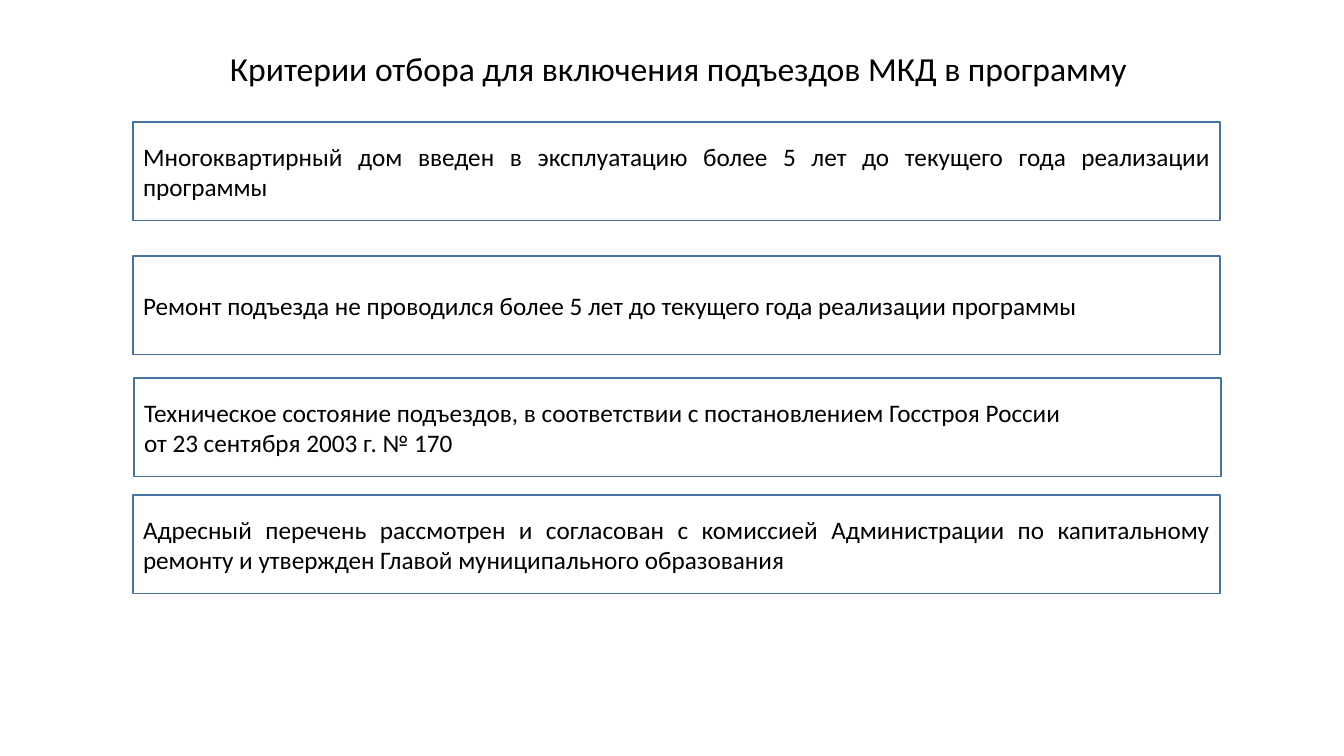
from pptx import Presentation
from pptx.dml.color import RGBColor
from pptx.enum.shapes import MSO_SHAPE
from pptx.enum.text import MSO_ANCHOR, PP_ALIGN
from pptx.util import Inches, Pt

TITLE = "Критерии отбора для включения подъездов МКД в программу"
CRITERIA = [
    (1.32, 1.21, ["Многоквартирный дом введен в эксплуатацию более 5 лет до текущего года реализации программы"]),
    (1.32, 2.54, ["Ремонт подъезда не проводился более 5 лет до текущего года реализации программы"]),
    (1.33, 3.75, ["Техническое состояние подъездов, в соответствии с постановлением Госстроя России",
                  "от 23 сентября 2003 г. № 170"]),
    (1.32, 4.91, ["Адресный перечень рассмотрен и согласован с комиссией Администрации по капитальному "
                  "ремонту и утвержден Главой муниципального образования"]),
]
BOX_WIDTH, BOX_HEIGHT = 10.78, 0.98
TITLE_FORMAT = {"alignment": PP_ALIGN.CENTER, "line_spacing": 0.9}
CRITERION_FORMAT = {"alignment": PP_ALIGN.JUSTIFY}


def color(value):
    return RGBColor.from_string(value)


def write(sp, lines, size, paragraph_format):
    tf = sp.text_frame
    tf.word_wrap = True
    tf.vertical_anchor = MSO_ANCHOR.MIDDLE
    for i, line in enumerate(lines):
        p = tf.add_paragraph() if i else tf.paragraphs[0]
        for name, value in paragraph_format.items():
            setattr(p, name, value)
        r = p.add_run()
        r.text = line
        for name, value in {"name": "Calibri", "size": Pt(size)}.items():
            setattr(r.font, name, value)
        r.font.color.rgb = color("000000")


def add_title(s, left, top, width, height):
    sp = s.shapes.add_textbox(Inches(left), Inches(top), Inches(width), Inches(height))
    write(sp, [TITLE], 24, TITLE_FORMAT)


def add_criterion(s, left, top, width, height, lines):
    sp = s.shapes.add_shape(MSO_SHAPE.RECTANGLE, Inches(left), Inches(top), Inches(width), Inches(height))
    sp.shadow.inherit = False
    sp.fill.background()
    sp.line.color.rgb = color("43739E")
    sp.line.width = Pt(1)
    write(sp, lines, 18, CRITERION_FORMAT)


def main():
    prs = Presentation()
    prs.slide_width, prs.slide_height = Inches(13.33), Inches(7.5)
    s = prs.slides.add_slide(prs.slide_layouts[6])
    add_title(s, 0.98, 0.51, 11.5, 0.39)
    for left, top, lines in CRITERIA:
        add_criterion(s, left, top, BOX_WIDTH, BOX_HEIGHT, lines)
    prs.save("out.pptx")


if __name__ == "__main__":
    main()
